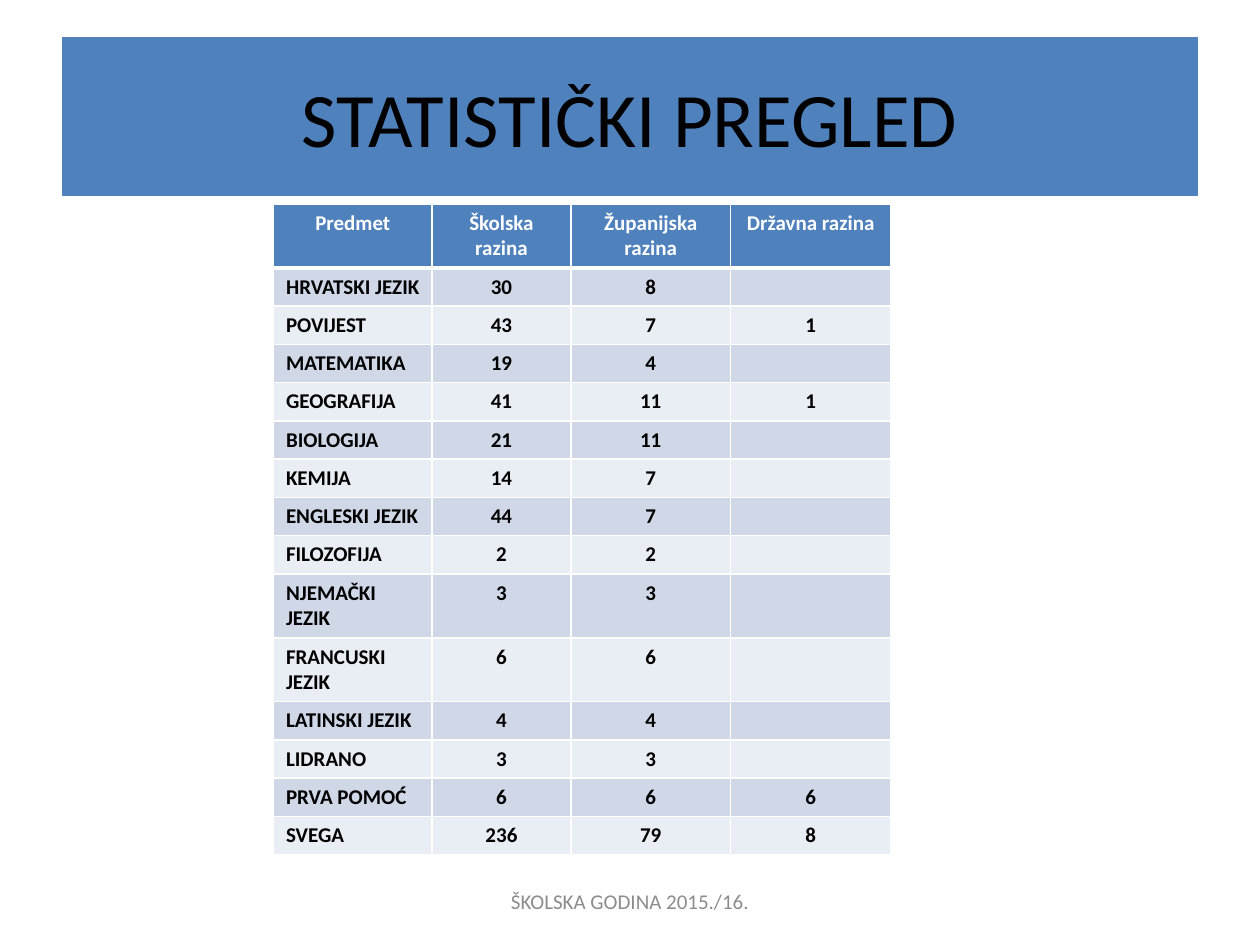
from typing import NamedTuple

from lxml.etree import SubElement
from pptx import Presentation
from pptx.dml.color import RGBColor
from pptx.enum.shapes import MSO_SHAPE as Shape
from pptx.enum.text import MSO_ANCHOR as Anchor, PP_ALIGN as Align
from pptx.oxml.ns import qn
from pptx.util import Pt

FONT = "Calibri"
COLORS = {
    "blue": "4F81BD",
    "band_dark": "D0D8E8",
    "band_light": "E9EDF4",
    "white": "FFFFFF",
    "black": "000000",
    "gray": "8C8C8C",
}
COLUMN_WIDTHS = (90.72, 79.2, 91.44, 91.44)
ROW_HEIGHT = 21.6
HEADINGS = ("Predmet", "Školska razina", "Županijska razina", "Državna razina")


class Subject(NamedTuple):
    name: str
    school: int
    county: int
    state: int | None = None


SUBJECTS = (
    Subject("HRVATSKI JEZIK", 30, 8),
    Subject("POVIJEST", 43, 7, 1),
    Subject("MATEMATIKA", 19, 4),
    Subject("GEOGRAFIJA", 41, 11, 1),
    Subject("BIOLOGIJA", 21, 11),
    Subject("KEMIJA", 14, 7),
    Subject("ENGLESKI JEZIK", 44, 7),
    Subject("FILOZOFIJA", 2, 2),
    Subject("NJEMAČKI JEZIK", 3, 3),
    Subject("FRANCUSKI JEZIK", 6, 6),
    Subject("LATINSKI JEZIK", 4, 4),
    Subject("LIDRANO", 3, 3),
    Subject("PRVA POMOĆ", 6, 6, 6),
    Subject("SVEGA", 236, 79, 8),
)


def rgb(name: str) -> RGBColor:
    return RGBColor.from_string(COLORS[name])


def write_text(frame, text: str, *, size: float = 12, color: str = "black",
               bold: bool = False, align: Align = Align.CENTER) -> None:
    frame.word_wrap = True
    paragraph = frame.paragraphs[0]
    paragraph.alignment = align
    if not text:
        SubElement(paragraph._p, qn("a:endParaRPr"), sz=str(round(size * 100)))
        return
    run = paragraph.add_run()
    run.text = text
    run.font.name = FONT
    run.font.size = Pt(size)
    run.font.bold = bold
    run.font.color.rgb = rgb(color)


def add_borders(cell, top: float, bottom: float) -> None:
    properties = cell._tc.get_or_add_tcPr()
    for side, width in (("L", 1), ("R", 1), ("T", top), ("B", bottom)):
        line = SubElement(properties, qn(f"a:ln{side}"), w=str(Pt(width)))
        fill = SubElement(line, qn("a:solidFill"))
        SubElement(fill, qn("a:srgbClr"), val=COLORS["white"])


def add_title(slide, text: str) -> None:
    banner = slide.shapes.add_shape(Shape.RECTANGLE, Pt(36), Pt(21.6), Pt(648), Pt(90))
    banner.shadow.inherit = False
    banner.fill.solid()
    banner.fill.fore_color.rgb = rgb("blue")
    banner.line.color.rgb = rgb("blue")
    banner.line.width = Pt(0.75)
    banner.text_frame.vertical_anchor = Anchor.MIDDLE
    write_text(banner.text_frame, text, size=44)


def add_results(slide) -> None:
    rows = (HEADINGS, *SUBJECTS)
    table = slide.shapes.add_table(
        len(rows), len(HEADINGS), Pt(156.24), Pt(116.64),
        Pt(sum(COLUMN_WIDTHS)), Pt(ROW_HEIGHT * len(rows))).table
    for column, width in zip(table.columns, COLUMN_WIDTHS):
        column.width = Pt(width)
    for row_index, values in enumerate(rows):
        table.rows[row_index].height = Pt(ROW_HEIGHT)
        is_header = row_index == 0
        band = "band_dark" if row_index % 2 else "band_light"
        for column_index, value in enumerate(values):
            cell = table.cell(row_index, column_index)
            add_borders(cell, top=3 if row_index == 1 else 1, bottom=3 if is_header else 1)
            cell.fill.solid()
            cell.fill.fore_color.rgb = rgb("blue" if is_header else band)
            is_name = column_index == 0 and not is_header
            write_text(cell.text_frame, "" if value is None else str(value), bold=True,
                       color="white" if is_header else "black",
                       align=Align.LEFT if is_name else Align.CENTER)


def add_footer(slide, text: str) -> None:
    footer = slide.shapes.add_textbox(Pt(246), Pt(500.4), Pt(228), Pt(28.8))
    footer.text_frame.vertical_anchor = Anchor.MIDDLE
    write_text(footer.text_frame, text, color="gray")


def main() -> None:
    presentation = Presentation()
    presentation.slide_width, presentation.slide_height = Pt(720), Pt(540)
    slide = presentation.slides.add_slide(presentation.slide_layouts[6])
    add_title(slide, "STATISTIČKI PREGLED")
    add_results(slide)
    add_footer(slide, "ŠKOLSKA GODINA 2015./16.")
    presentation.save("out.pptx")


if __name__ == "__main__":
    main()
